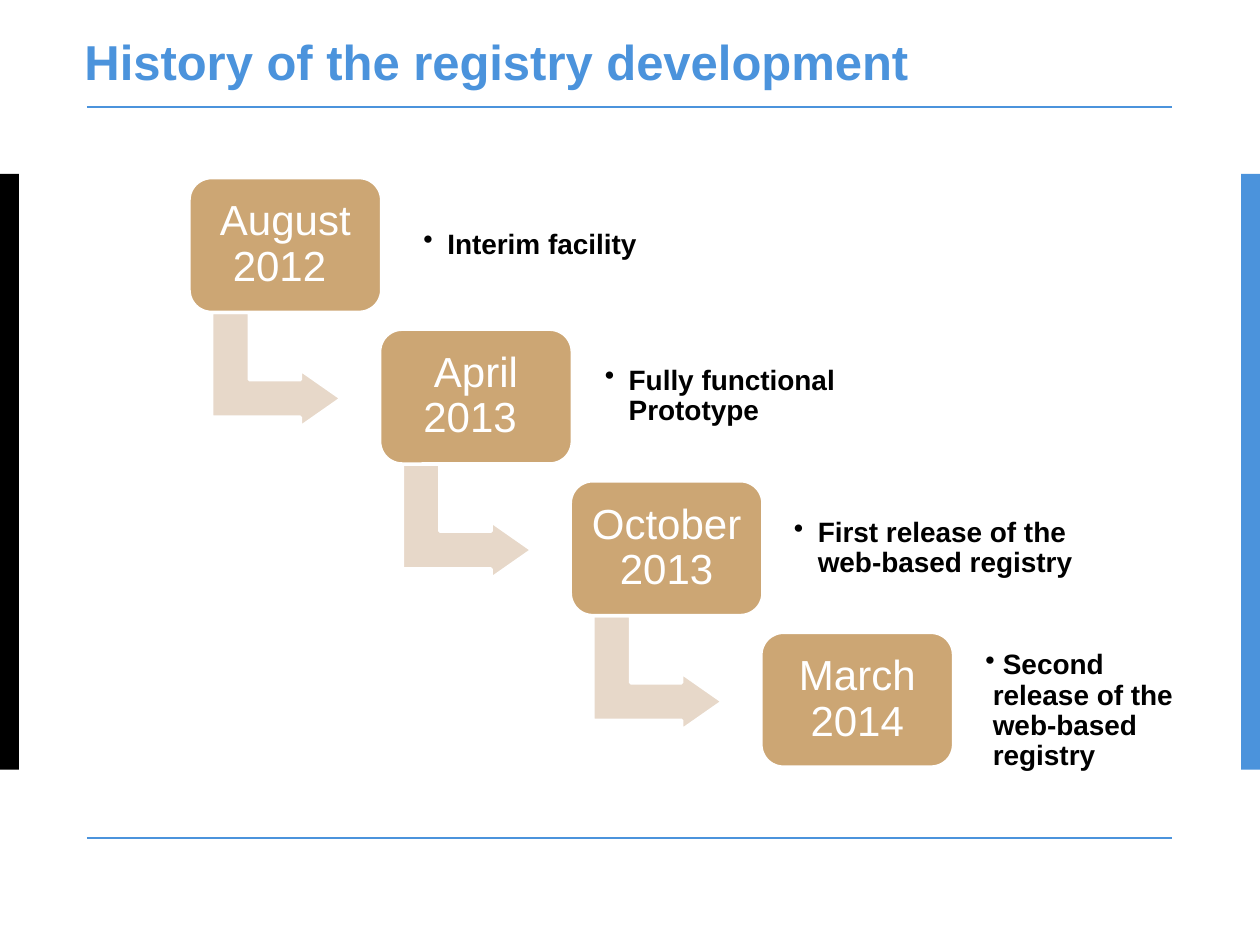
from dataclasses import dataclass

from lxml.etree import SubElement
from pptx import Presentation
from pptx.dml.color import RGBColor
from pptx.enum.shapes import MSO_CONNECTOR, MSO_SHAPE
from pptx.enum.text import MSO_ANCHOR, PP_ALIGN
from pptx.oxml.ns import qn
from pptx.util import Inches, Pt


@dataclass(frozen=True)
class Theme:
    font: str = "Arial"
    accent: str = "4B93DC"
    card: str = "CCA674"
    arrow: str = "E7D8C9"
    light: str = "FFFFFF"
    dark: str = "000000"
    title_size: int = 28
    date_size: int = 24
    detail_size: int = 16


THEME = Theme()
WIDTH, HEIGHT = 10, 7.5
STEP_LEFT, STEP_TOP = 1.5, 1.41
COLUMN, ROW = 1.513, 1.203
CARD_WIDTH, CARD_HEIGHT = 1.53, 1.07
ARROW_WIDTH, ARROW_HEIGHT = 0.91, 1.03
DETAIL_HEIGHT = 0.87

MILESTONES = [
    ("August 2012 ", "Interim facility", (3.29, 1.51, 2.13), 0.07, 0.19),
    ("April 2013 ", "Fully functional Prototype", (4.73, 2.71, 2.46), 0.07, 0.19),
    ("October 2013", "First release of the web-based registry", (6.23, 3.92, 2.72), 0.07, 0.19),
    ("March 2014", " Second release of the web-based registry", (7.76, 5.21, 1.81), 0.06, 0.06),
]


def color(code):
    return RGBColor.from_string(code)


def add_block(slide, kind, box, fill, outline=None):
    block = slide.shapes.add_shape(kind, *map(Inches, box))
    block.shadow.inherit = False
    block.fill.solid()
    block.fill.fore_color.rgb = color(fill)
    if outline:
        block.line.color.rgb = color(outline)
        block.line.width = Pt(2)
    else:
        block.line.fill.background()
    return block


def add_rule(slide, top):
    rule = slide.shapes.add_connector(
        MSO_CONNECTOR.STRAIGHT, Inches(0.69), Inches(top), Inches(9.3), Inches(top))
    rule.line.color.rgb = color(THEME.accent)
    rule.line.width = Pt(1)
    SubElement(rule._element.spPr, qn("a:effectLst"))


def set_frame(frame, inset, anchor=MSO_ANCHOR.MIDDLE):
    frame.word_wrap = True
    frame.vertical_anchor = anchor
    frame.margin_left = frame.margin_right = Inches(inset)
    frame.margin_top = frame.margin_bottom = Inches(inset)


def write(paragraph, text, size, ink, bold=False, spacing=None):
    paragraph.text = text
    paragraph.line_spacing = spacing
    paragraph.font.name = THEME.font
    paragraph.font.size = Pt(size)
    paragraph.font.color.rgb = color(ink)
    paragraph.font.bold = bold


def add_bullet(paragraph, indent):
    properties = paragraph._p.get_or_add_pPr()
    properties.set("marL", str(Inches(indent)))
    properties.set("indent", str(-Inches(indent)))
    SubElement(properties, qn("a:buChar"), char="•")


def add_title(slide, text):
    frame = slide.shapes.add_textbox(*map(Inches, (0.67, 0.21, 8.61, 0.74))).text_frame
    set_frame(frame, 0, MSO_ANCHOR.TOP)
    frame.margin_top = Inches(0.04)
    write(frame.paragraphs[0], text, THEME.title_size, THEME.accent, bold=True)


def add_arrow(slide, left, top):
    arrow = add_block(slide, MSO_SHAPE.BENT_UP_ARROW,
                      (left, top, ARROW_WIDTH, ARROW_HEIGHT), THEME.arrow, THEME.light)
    arrow.rotation = 90
    for index, share in enumerate((0.328, 0.25, 0.358)):
        arrow.adjustments[index] = share


def add_card(slide, left, top, date):
    card = add_block(slide, MSO_SHAPE.ROUNDED_RECTANGLE,
                     (left, top, CARD_WIDTH, CARD_HEIGHT), THEME.card, THEME.light)
    set_frame(card.text_frame, 0.1)
    paragraph = card.text_frame.paragraphs[0]
    paragraph.alignment = PP_ALIGN.CENTER
    write(paragraph, date, THEME.date_size, THEME.light, spacing=0.9)


def add_detail(slide, text, place, inset, indent):
    frame = slide.shapes.add_textbox(*map(Inches, (*place, DETAIL_HEIGHT))).text_frame
    set_frame(frame, inset)
    paragraph = frame.paragraphs[0]
    add_bullet(paragraph, indent)
    write(paragraph, text, THEME.detail_size, THEME.dark, bold=True, spacing=0.9)


def main():
    deck = Presentation()
    deck.slide_width, deck.slide_height = Inches(WIDTH), Inches(HEIGHT)
    slide = deck.slides.add_slide(deck.slide_layouts[6])

    for left, fill in ((0, THEME.dark), (WIDTH - 0.15, THEME.accent)):
        add_block(slide, MSO_SHAPE.RECTANGLE, (left, 1.38, 0.15, 4.73), fill)
    for top in (0.85, 6.65):
        add_rule(slide, top)
    add_title(slide, "History of the registry development")

    for step, (date, detail, place, inset, indent) in enumerate(MILESTONES):
        left, top = STEP_LEFT + step * COLUMN, STEP_TOP + step * ROW
        if step < len(MILESTONES) - 1:
            add_arrow(slide, left + 0.24, top + 1.01)
        add_card(slide, left, top, date)
        add_detail(slide, detail, place, inset, indent)

    deck.save("out.pptx")


if __name__ == "__main__":
    main()
